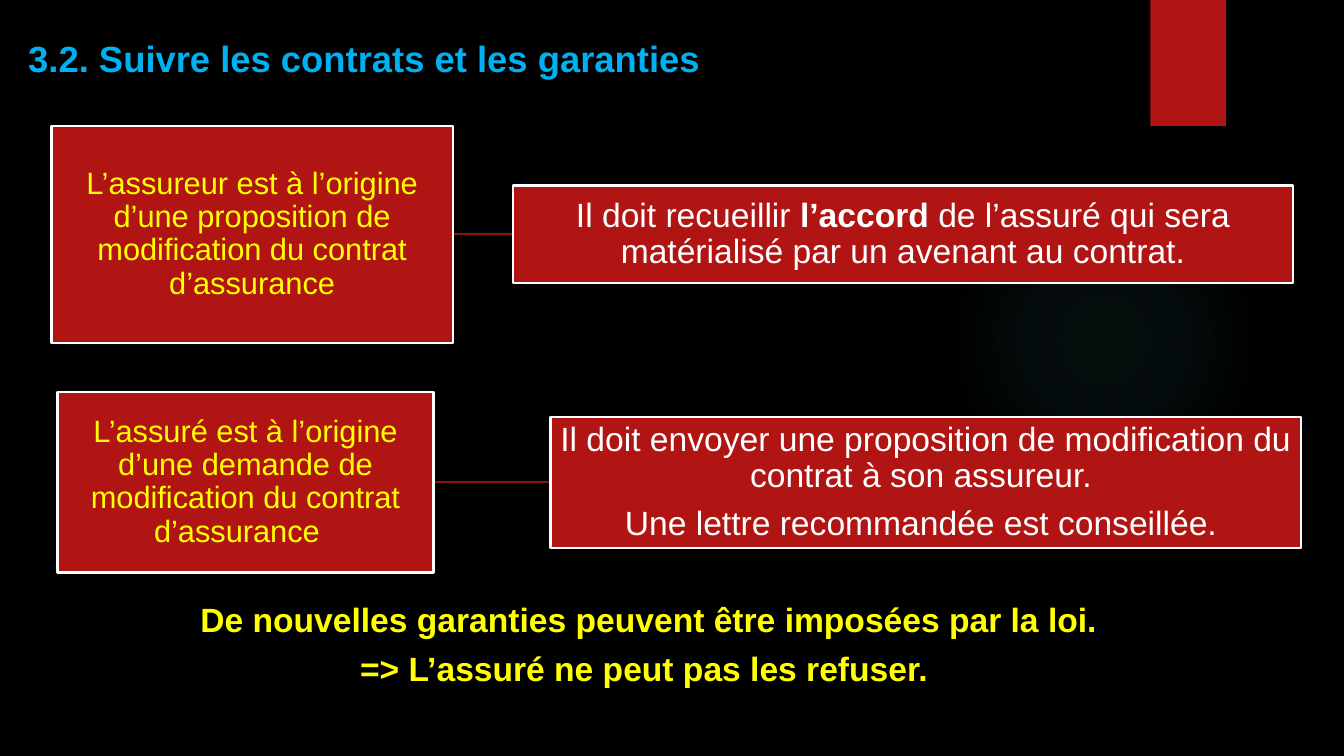
from pptx import Presentation
from pptx.dml.color import RGBColor
from pptx.enum.shapes import MSO_CONNECTOR, MSO_SHAPE
from pptx.enum.text import MSO_ANCHOR as Anchor, MSO_AUTO_SIZE as AutoSize, PP_ALIGN as Align
from pptx.oxml import parse_xml
from pptx.oxml.ns import nsdecls
from pptx.util import Inches, Pt
from lxml.etree import SubElement

BLACK = RGBColor(0x00, 0x00, 0x00)
WHITE = RGBColor(0xFF, 0xFF, 0xFF)
RED = RGBColor(0xB0, 0x15, 0x13)
DARK_RED = RGBColor(0x8D, 0x11, 0x0F)
YELLOW = RGBColor(0xFF, 0xFF, 0x00)
SKY = RGBColor(0x00, 0xB0, 0xF0)
TEAL = RGBColor(0x50, 0xB9, 0xC1)

WIDTH, HEIGHT = Inches(13.33), Inches(7.5)
INSET = Inches(0.02)


def area(left, top, width, height):
    """Turn percentages of the slide into a box."""
    return (int(WIDTH * left / 100), int(HEIGHT * top / 100),
            int(WIDTH * width / 100), int(HEIGHT * height / 100))


def place(holder, box):
    holder.left, holder.top, holder.width, holder.height = box


def write(frame, paragraphs, font, layout):
    """Fill a frame; each paragraph is a list of (text, bold) runs."""
    frame.word_wrap = True
    frame.auto_size = AutoSize.NONE
    for index, runs in enumerate(paragraphs):
        paragraph = frame.paragraphs[0] if index == 0 else frame.add_paragraph()
        for name, value in layout.items():
            setattr(paragraph, name, value)
        if index == 0:
            paragraph.space_before = Pt(0)
        for text, bold in runs:
            run = paragraph.add_run()
            run.text = text
            for name, value in {"name": "Arial", "size": Pt(font["size"]), "bold": bold}.items():
                setattr(run.font, name, value)
            run.font.color.rgb = font["color"]


def add_decor(slide, halo_box, ribbon_box):
    # Faint round glow
    halo = slide.shapes.add_shape(MSO_SHAPE.OVAL, *halo_box)
    halo.shadow.inherit = False
    halo.line.fill.background()
    halo.fill.background()
    stops = "".join(
        f'<a:gs pos="{position * 1000}"><a:srgbClr val="{TEAL}">'
        f'<a:alpha val="{alpha * 1000}"/></a:srgbClr></a:gs>'
        for position, alpha in ((0, 7), (36, 6), (69, 0), (100, 0)))
    glow = parse_xml(
        f'<a:gradFill {nsdecls("a")} rotWithShape="1"><a:gsLst>{stops}</a:gsLst>'
        '<a:path path="circle"><a:fillToRect l="50000" t="50000" r="50000" b="50000"/>'
        '</a:path></a:gradFill>')
    properties = halo.element.spPr
    properties.replace(properties.find("{*}noFill"), glow)

    # Ribbon hanging from the top edge
    ribbon = slide.shapes.add_shape(MSO_SHAPE.RECTANGLE, *ribbon_box)
    ribbon.shadow.inherit = False
    ribbon.fill.solid()
    ribbon.fill.fore_color.rgb = RED
    ribbon.line.fill.background()


def add_title(slide, box, text):
    title = slide.shapes.title
    place(title, box)
    title.text_frame.vertical_anchor = Anchor.TOP
    write(title.text_frame, [[(text, True)]], {"size": 26, "color": SKY},
          {"alignment": Align.JUSTIFY})


def add_card(slide, box, paragraphs, font):
    card = slide.shapes.add_shape(MSO_SHAPE.RECTANGLE, *box)
    card.shadow.inherit = False
    card.fill.solid()
    card.fill.fore_color.rgb = RED
    card.line.color.rgb = WHITE
    card.line.width = Pt(1.5)
    frame = card.text_frame
    frame.vertical_anchor = Anchor.MIDDLE
    for side in ("left", "top", "right", "bottom"):
        setattr(frame, f"margin_{side}", INSET)
    write(frame, paragraphs, font,
          {"alignment": Align.CENTER, "line_spacing": 0.9, "space_after": Pt(8.4)})


def add_case(slide, box, shares, cause, effect):
    """Cause on the left, linked to its effect on the right."""
    left, top, width, height = box
    cause_width, effect_width, effect_height = (
        int(length * share / 100) for length, share in zip((width, width, height), shares))
    effect_left, middle = left + width - effect_width, top + height // 2

    link = slide.shapes.add_connector(
        MSO_CONNECTOR.STRAIGHT, left + cause_width, middle, effect_left, middle)
    link.line.color.rgb = DARK_RED
    link.line.width = Pt(1.5)
    SubElement(link.element.spPr, "{http://schemas.openxmlformats.org/drawingml/2006/main}effectLst")

    add_card(slide, (left, top, cause_width, height), cause, {"size": 22, "color": YELLOW})
    add_card(slide, (effect_left, middle - effect_height // 2, effect_width, effect_height),
             effect, {"size": 24, "color": WHITE})


def add_conclusion(slide, box, paragraphs):
    body = slide.placeholders[1]
    place(body, box)
    frame = body.text_frame
    frame.vertical_anchor = Anchor.TOP
    write(frame, paragraphs, {"size": 24, "color": YELLOW},
          {"alignment": Align.CENTER, "space_before": Pt(6)})
    for paragraph in frame.paragraphs:
        properties = paragraph._p.get_or_add_pPr()
        properties.set("marL", "0")
        properties.set("indent", "0")
        properties.append(parse_xml(f'<a:buNone {nsdecls("a")}/>'))


def main():
    deck = Presentation()
    deck.slide_width, deck.slide_height = WIDTH, HEIGHT
    slide = deck.slides.add_slide(deck.slide_layouts[1])
    slide.background.fill.solid()
    slide.background.fill.fore_color.rgb = BLACK

    add_decor(slide, area(70.59, 24.4, 23.11, 41.07), area(85.6, 0, 5.63, 16.67))
    add_title(slide, area(1.35, 4.13, 89.72, 7.2), "3.2. Suivre les contrats et les garanties")

    # Shares: cause width, effect width, effect height
    add_case(slide, area(3.83, 16.67, 92.35, 28.67), (32.33, 62.8, 45.1),
             [[("L’assureur est à l’origine d’une proposition de modification du contrat "
                "d’assurance", False)]],
             [[("Il doit recueillir ", False), ("l’accord", True),
               (" de l’assuré qui sera matérialisé par un avenant au contrat.", False)]])
    add_case(slide, area(4.28, 51.87, 92.5, 23.87), (30.25, 60.34, 72.6),
             [[("L’assuré est à l’origine d’une demande de modification du contrat "
                "d’assurance  ", False)]],
             [[("Il doit envoyer une proposition de modification du contrat à son assureur. ", False)],
              [("Une lettre recommandée est conseillée. ", False)]])

    add_conclusion(slide, area(2.1, 78.53, 93.02, 13.2),
                   [[("De nouvelles garanties peuvent être imposées par la loi. ", True)],
                    [("=> L’assuré ne peut pas les refuser.  ", True)]])
    deck.save("out.pptx")


if __name__ == "__main__":
    main()
